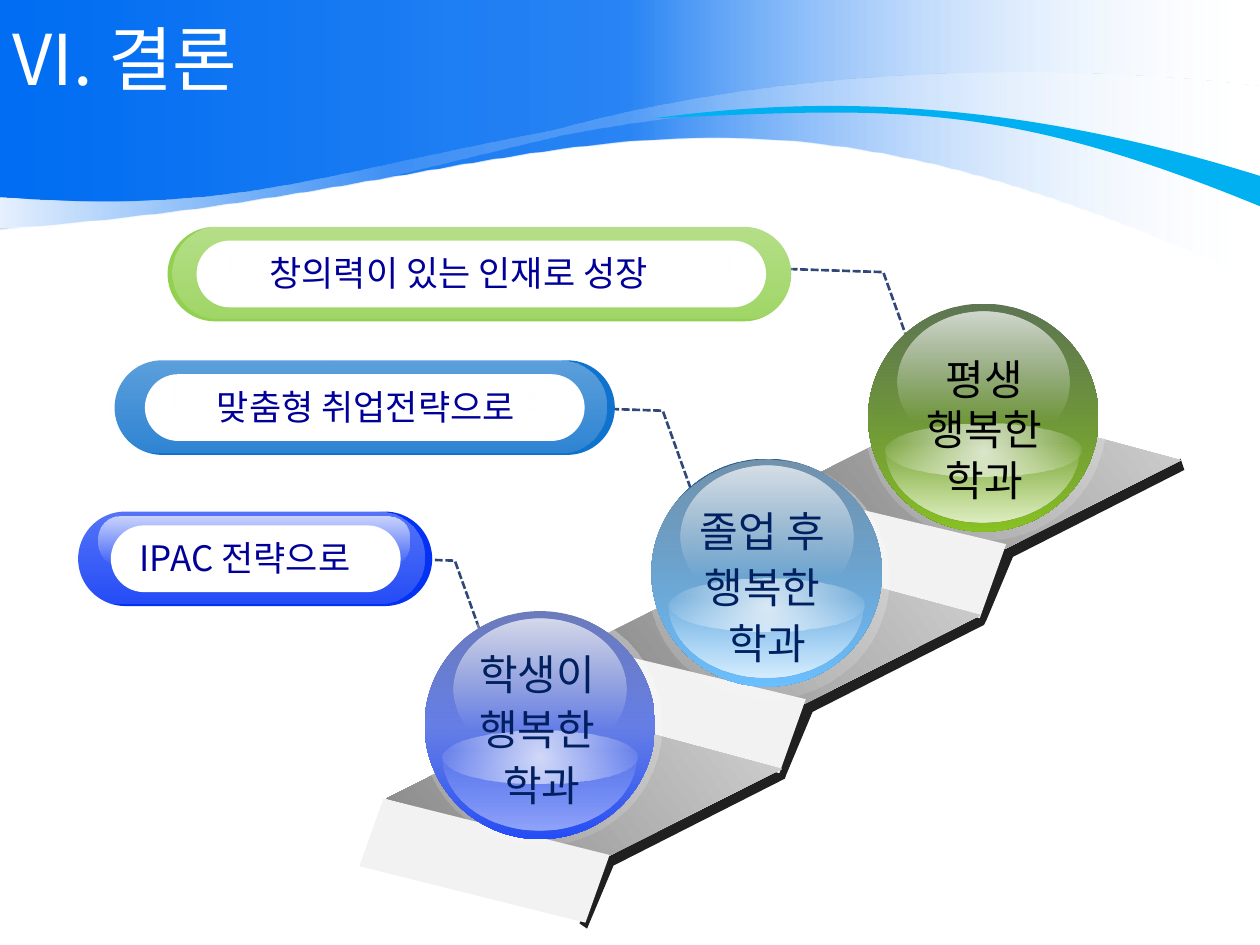
import lxml.etree
import pptx
import pptx.dml.color
import pptx.enum.dml
import pptx.enum.shapes
import pptx.enum.text
import pptx.oxml.ns
import pptx.util

Inches = pptx.util.Inches
Pt = pptx.util.Pt
qn = pptx.oxml.ns.qn
SHAPE = pptx.enum.shapes.MSO_SHAPE
ALIGN = pptx.enum.text.PP_ALIGN
ANCHOR = pptx.enum.text.MSO_ANCHOR
FONT = "Noto Sans CJK KR"
WHITE = "FFFFFF"


def paint(shape, stops, angle=90):
    """Fill with (position, colour, opacity) stops; angle None makes a radial blend."""
    shape.shadow.inherit = False
    shape.line.fill.background()
    if len(stops) == 1:
        shape.fill.solid()
        shape.fill.fore_color.rgb = pptx.dml.color.RGBColor.from_string(stops[0][1])
        return
    shape.fill.background()
    properties = shape._element.spPr
    blend = lxml.etree.Element(qn("a:gradFill"), rotWithShape="1")
    stop_list = lxml.etree.SubElement(blend, qn("a:gsLst"))
    for position, colour, opacity in stops:
        stop = lxml.etree.SubElement(stop_list, qn("a:gs"), pos=str(position * 1000))
        tint = lxml.etree.SubElement(stop, qn("a:srgbClr"), val=colour)
        if opacity < 100:
            lxml.etree.SubElement(tint, qn("a:alpha"), val=str(opacity * 1000))
    if angle is None:
        radial = lxml.etree.SubElement(blend, qn("a:path"), path="circle")
        lxml.etree.SubElement(radial, qn("a:fillToRect"), l="50000", t="50000", r="50000", b="50000")
    else:
        lxml.etree.SubElement(blend, qn("a:lin"), ang=str(angle * 60000), scaled="0")
    properties.replace(properties.find(qn("a:noFill")), blend)


def write(box, lines, size, colour, align, anchor, gap=0):
    frame = box.text_frame
    frame.word_wrap = False
    frame.vertical_anchor = anchor
    for index, line in enumerate(lines):
        para = frame.add_paragraph() if index else frame.paragraphs[0]
        para.alignment = align
        if index and gap:
            para.space_before = Pt(gap)
        span = para.add_run()
        span.text = line
        span.font.size = Pt(size)
        span.font.name = FONT
        span.font.color.rgb = pptx.dml.color.RGBColor.from_string(colour)
        lxml.etree.SubElement(span.font._element, qn("a:ea"), typeface=FONT)


deck = pptx.Presentation()
deck.slide_width, deck.slide_height = Inches(10), Inches(7.5)
page = deck.slides.add_slide(deck.slide_layouts[5])
shapes = page.shapes

# Header waves: a two-number step is a straight line, a six-number step a Bézier curve
waves = [
    ([(10.01, 0), (-0.01, 0), (-0.01, 1.81), (4.49, 1.5, 5.45, 0.14, 10.01, 2.24)],
     [(0, "006DF2", 100), (50, "006DF2", 83), (100, WHITE, 0)]),
    ([(10.01, 0.69), (9.55, 0.63, 6.92, 0.34, 4.4, 1.03), (2.42, 1.4, 1.86, 1.69, 0.01, 1.56),
      (-0.01, 1.56), (-0.01, 1.81), (2.03, 1.73, 2.66, 1.49, 4.48, 1.07),
      (5.43, 0.9, 7.46, 0.55, 10.01, 1.39)],
     [(0, WHITE, 90), (31, WHITE, 16), (86, WHITE, 24)]),
    ([(5.18, 0.94), (7.04, 0.86, 7.93, 0.78, 10.03, 1.65), (10.01, 1.4),
      (7.75, 0.69, 6.17, 0.81, 5.18, 0.94)],
     [(0, "00B0F0", 100)]),
]
for (start, *steps), stops in waves:
    builder = shapes.build_freeform(*map(Inches, start))
    for step in steps:
        builder.add_line_segments(
            [(Inches(x), Inches(y)) for x, y in zip(step[::2], step[1::2])], close=False)
    builder.add_line_segments([], close=True)
    wave = builder.convert_to_shape()
    lines = iter(list(wave._element.iter(qn("a:lnTo"))))
    for step in steps:
        first = next(lines)
        if len(step) == 6:
            # Three drawn points become the two handles and the end of one curve
            first.tag = qn("a:cubicBezTo")
            for extra in (next(lines), next(lines)):
                first.append(extra[0])
                extra.getparent().remove(extra)
    paint(wave, stops, 0)

# The title sits above the waves
title = shapes.title
shapes._spTree.append(title._element)
title.left, title.top, title.width, title.height = Inches(0), Inches(0.22), Inches(9.34), Inches(0.48)
write(title, ["VI. 결론"], 40, WHITE, ALIGN.LEFT, ANCHOR.MIDDLE)

# Dashed leaders from the pills to the spheres
for x, y in [(6.09, 2.13), (4.34, 3.23), (2.69, 4.42)]:
    builder = shapes.build_freeform(Inches(x + 1.35), Inches(y + 1.23))
    builder.add_line_segments([(Inches(x + 0.92), Inches(y + 0.03)), (Inches(x), Inches(y))], close=False)
    leader = builder.convert_to_shape()
    leader.shadow.inherit = False
    leader.fill.background()
    leader.line.color.rgb = pptx.dml.color.RGBColor.from_string("304878")
    leader.line.width = Pt(1.5)
    leader.line.dash_style = pptx.enum.dml.MSO_LINE.SQUARE_DOT
    for end in ("a:headEnd", "a:tailEnd"):
        lxml.etree.SubElement(leader.line._ln, qn(end), type="oval")

# Stairs, top step first: one dark edge along all, then tread and riser of each
stairs = [
    (6.35, 3.17, (6.58, 3.49, 0.82, 1.82)),
    (4.76, 4.4, (4.99, 4.72, 0.82, 1.82)),
    (3.18, 5.62, (3.47, 5.91, 0.75, 1.84)),
]
outer = [(3.05, 0.56), (1.69, 1.25), (1.48, 1.75)]
inner = [(3.02, 0.47), (1.62, 1.16), (1.42, 1.71)]
outer_side, inner_side = [
    [(Inches(left + x), Inches(top + y)) for left, top, riser in stairs for x, y in side]
    for side in (outer, inner)
]
builder = shapes.build_freeform(*outer_side[0])
builder.add_line_segments(outer_side[1:] + inner_side[::-1])
paint(builder.convert_to_shape(), [(0, "202020", 100)])
for left, top, riser in stairs:
    for bounds, slant, turn, stops in [
        ((left, top, 2.91, 1.2), 1.12, 333.3, [(0, "D9D9D9", 100), (100, "808080", 100)]),
        (riser, 0.24, 289.6, [(0, "F2F2F2", 100)]),
    ]:
        face = shapes.add_shape(SHAPE.PARALLELOGRAM, *map(Inches, bounds))
        face.adjustments[0] = slant
        face.rotation = turn
        face._element.spPr.xfrm.set("flipH", "1")
        paint(face, stops, 10)

# Glass spheres
sheen = [(0, WHITE, 33), (100, WHITE, 13)]
gloss = [(0, WHITE, 71), (78, WHITE, 0)]
glint = [(0, WHITE, 73), (100, WHITE, 6)]
spheres = [
    (6.89, 2.41, [(0, "123600", 100), (100, "76B800", 100)], 72, -0.02,
     (6.95, 3.13), ["평생", "행복한", "학과"], "000000", 0),
    (5.17, 3.64, [(0, "2E5E86", 100), (100, "53B5FF", 100)], 72, 0.01,
     (5.23, 4.38), ["졸업 후 ", "행복한 ", "학과"], "002060", 3),
    (3.37, 4.85, [(0, "283E9D", 100), (50, "3959DF", 100), (100, "0432F5", 100)], 48, -0.04,
     (3.44, 5.51), ["학생이 ", "행복한 ", "학과"], "002060", 3),
]
for left, top, body, glow, halo_top, label_at, lines, colour, gap in spheres:
    bowl = [(0, WHITE, glow), (54, WHITE, 0)]
    for dx, dy, width, height, stops, angle, flipped in [
        (0, 0, 1.83, 1.81, body, 90, False),
        (0.23, 0.06, 1.37, 1.12, gloss, 90, False),
        (0.14, 0.95, 1.55, 0.42, glint, None, True),
        (0.14, 0.57, 1.54, 1.17, bowl, 90, True),
        (-0.03, halo_top, 1.91, 1.89, sheen, 90, False),
    ]:
        layer = shapes.add_shape(SHAPE.OVAL, Inches(left + dx), Inches(top + dy), Inches(width), Inches(height))
        if flipped:
            layer._element.spPr.xfrm.set("flipV", "1")
        paint(layer, stops, angle)
    label = shapes.add_textbox(*map(Inches, label_at), Inches(1.72), Inches(0.55))
    write(label, lines, 24, colour, ALIGN.CENTER, ANCHOR.MIDDLE, gap)

# Pills: layers of (left, top, width, height, corner, stops), then the label
shine = [(0, WHITE, 70), (100, WHITE, 0)]
plain = [(0, WHITE, 100)]
pills = [
    ([(0.62, 4.06, 2.81, 0.75, 0.5, [(0, "0432F5", 100)]),
      (0.78, 4.1, 2.47, 0.38, 0.43, shine),
      (0.57, 4.06, 2.8, 0.73, 0.5, sheen),
      (0.88, 4.17, 2.3, 0.53, 0.5, plain),
      (1.01, 4.21, 2.02, 0.27, 0.43, shine)],
     (1.01, 4.21, 2.1, 0.43), "IPAC 전략으로", ALIGN.LEFT),
    ([(1.33, 1.8, 4.95, 0.75, 0.5, [(0, "92D050", 100)]),
      (1.37, 1.8, 4.92, 0.73, 0.5, sheen),
      (1.56, 1.91, 4.52, 0.53, 0.5, plain),
      (1.82, 1.95, 3.98, 0.27, 0.43, shine)],
     (1.33, 1.95, 4.62, 0.43), "창의력이 있는 인재로 성장", ALIGN.CENTER),
    ([(0.91, 2.86, 3.97, 0.75, 0.5, [(0, "0F72CC", 100)]),
      (0.86, 2.86, 3.95, 0.73, 0.5, sheen),
      (1.15, 2.97, 3.49, 0.53, 0.5, plain),
      (1.35, 3, 3.07, 0.27, 0.43, shine)],
     (1.27, 3.01, 3.27, 0.43), "맞춤형 취업전략으로", ALIGN.CENTER),
]
for layers, label_bounds, text, align in pills:
    for *bounds, corner, stops in layers:
        layer = shapes.add_shape(SHAPE.ROUNDED_RECTANGLE, *map(Inches, bounds))
        layer.adjustments[0] = corner
        paint(layer, stops)
    label = shapes.add_textbox(*map(Inches, label_bounds))
    write(label, [text], 20, "000099", align, ANCHOR.TOP)

deck.save("out.pptx")
